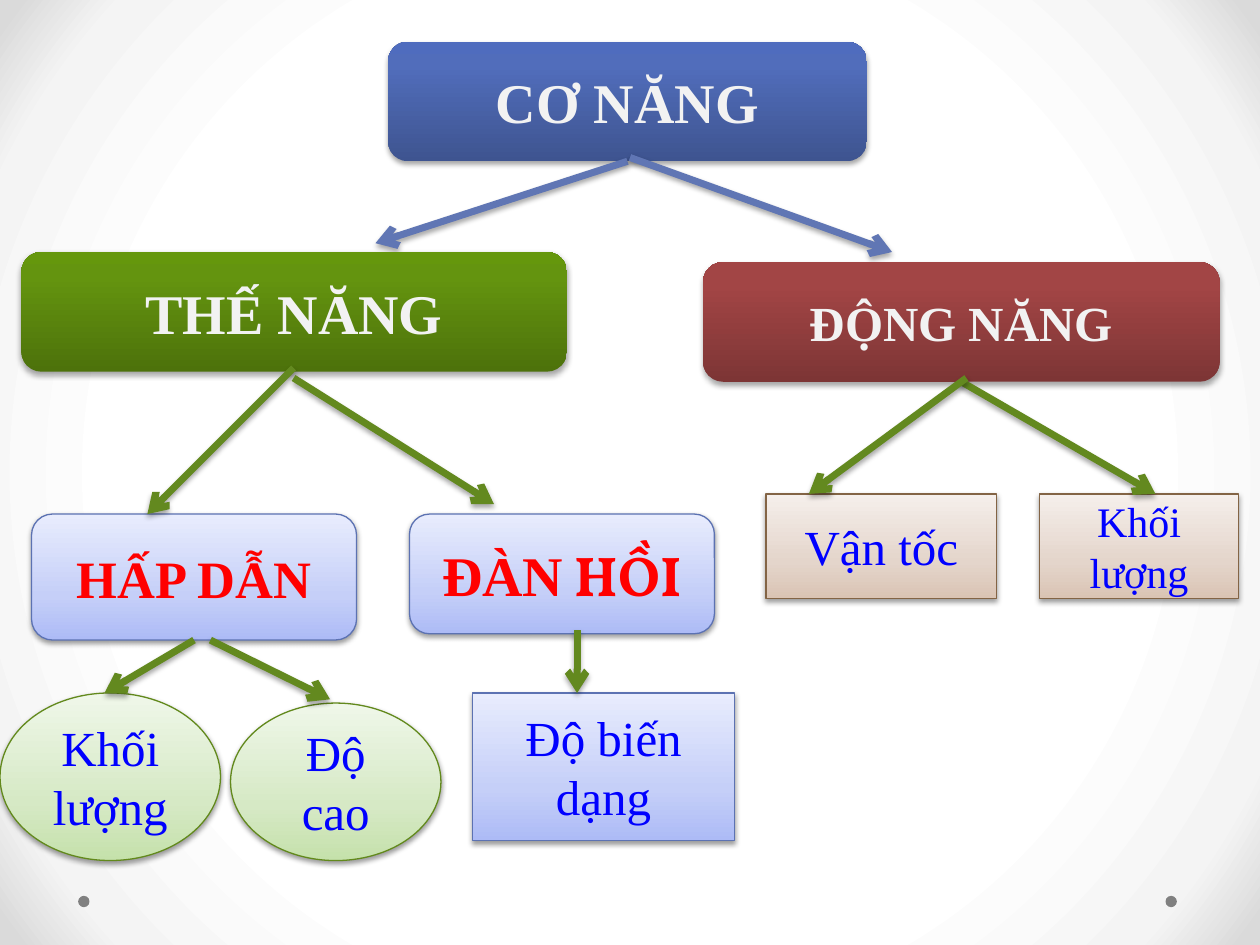
from lxml import etree
from pptx import Presentation
from pptx.dml.color import RGBColor
from pptx.enum.shapes import MSO_CONNECTOR, MSO_SHAPE
from pptx.enum.text import MSO_ANCHOR, PP_ALIGN
from pptx.oxml.ns import qn
from pptx.util import Emu, Pt

PX = 9144
SERIF = "Times New Roman"
COLORS = {
    "dot": "808080", "title": "F2F2F2", "kind": "FF0000", "factor": "0000FF",
    "shadow": "000000", "blue": "6076B4", "green": "63891F",
    "blue_edge": "5C72B2", "green_edge": "62891C", "tan_edge": "836445",
}
GRADIENTS = {
    "page": {65: "FFFFFF", 88: "F4F4F4", 98: "DADADA"},
    "blue": {0: "3E5490", 80: "516DBB", 100: "4F6CBE"},
    "green": {0: "4D720B", 80: "64940F", 100: "65970C"},
    "red": {0: "7D3535", 80: "A24545", 100: "A44343"},
    "pale_blue": {0: "ADBBF6", 35: "C5CFF8", 100: "E8ECFD"},
    "pale_green": {0: "C5E1AB", 35: "D6E9C5", 100: "EFF7E9"},
    "pale_tan": {0: "DAC4B4", 35: "E4D5CB", 100: "F5EFEB"},
}
TITLE = {"shape": MSO_SHAPE.ROUNDED_RECTANGLE, "color": "title", "bold": True}
KIND = {"shape": MSO_SHAPE.ROUNDED_RECTANGLE, "color": "kind", "bold": True,
        "fill": "pale_blue", "edge": "blue_edge"}
FACTOR = {"shape": MSO_SHAPE.RECTANGLE, "color": "factor", "bold": False}
OVAL = FACTOR | {"shape": MSO_SHAPE.OVAL, "fill": "pale_green", "edge": "green_edge"}
BLUE_BOX = FACTOR | {"fill": "pale_blue", "edge": "blue_edge"}
TAN_BOX = FACTOR | {"fill": "pale_tan", "edge": "tan_edge"}


def rgb(name):
    return RGBColor.from_string(COLORS[name])


def px(*lengths):
    return [Emu(length * PX) for length in lengths]


def add_node(parent, tag, **values):
    return etree.SubElement(parent, qn(tag), values)


def set_gradient(fill, name, circle=False):
    fill.gradient()
    gradient = fill._xPr.find(qn("a:gradFill"))
    for child in list(gradient):
        gradient.remove(child)
    stops = add_node(gradient, "a:gsLst")
    for position, color in GRADIENTS[name].items():
        stop = add_node(stops, "a:gs", pos=str(position * 1000))
        add_node(stop, "a:srgbClr", val=color)
    if circle:
        path = add_node(gradient, "a:path", path="circle")
        add_node(path, "a:fillToRect", **dict.fromkeys("ltrb", "50000"))
    else:
        add_node(gradient, "a:lin", ang="16200000", scaled="0")


def add_shadow(effects, opacity, distance):
    shadow = add_node(effects, "a:outerShdw", blurRad=str(Pt(3.1)),
                      dist=str(Pt(distance)), dir="5400000", rotWithShape="0")
    color = add_node(shadow, "a:srgbClr", val=COLORS["shadow"])
    add_node(color, "a:alpha", val=str(opacity * 1000))


def add_box(page, origin, place, spans, size, style):
    left, top, width, height = place
    shape = page.shapes.add_shape(
        style["shape"], *px(origin[0] + left, origin[1] + top, width, height))
    set_gradient(shape.fill, style["fill"])
    shape.shadow.inherit = False
    effects = shape._element.spPr.find(qn("a:effectLst"))
    if "edge" in style:
        shape.line.color.rgb = rgb(style["edge"])
        shape.line.width = Pt(0.75)
        add_shadow(effects, 38, 1.6)
    else:
        shape.line.fill.background()
        add_shadow(effects, 35, 1.8)
    shape.text_frame.word_wrap = True
    shape.text_frame.vertical_anchor = MSO_ANCHOR.MIDDLE
    para = shape.text_frame.paragraphs[0]
    para.alignment = PP_ALIGN.CENTER
    for text, face in spans:
        span = para.add_run()
        span.text = text
        span.font.color.rgb = rgb(style["color"])
        font_format = {"name": face, "size": Pt(size), "bold": style["bold"]}
        for key, value in font_format.items():
            setattr(span.font, key, value)


def add_arrow(page, origin, points, color):
    left, top = origin
    x1, y1, x2, y2 = points
    arrow = page.shapes.add_connector(
        MSO_CONNECTOR.STRAIGHT, *px(left + x1, top + y1, left + x2, top + y2))
    arrow.line.color.rgb = rgb(color)
    arrow.line.width = Pt(4)
    add_node(arrow.line._get_or_add_ln(), "a:tailEnd", type="arrow")
    add_shadow(add_node(arrow._element.spPr, "a:effectLst"), 35, 1.8)


def add_branch(page, origin, boxes, arrows, arrow_color):
    for place, spans, size, style in boxes:
        add_box(page, origin, place, spans, size, style)
    for points in arrows:
        add_arrow(page, origin, points, arrow_color)


def add_backdrop(page):
    set_gradient(page.background.fill, "page", circle=True)
    for left in (925, 62):
        dot = page.shapes.add_shape(MSO_SHAPE.OVAL, *px(left, 711, 9, 9))
        dot.fill.solid()
        dot.fill.fore_color.rgb = rgb("dot")
        dot.line.fill.background()
        dot.shadow.inherit = False


def add_mechanical_energy(page, origin):
    boxes = [((0, 0, 380, 95), [("CƠ NĂNG", SERIF)], 32, TITLE | {"fill": "blue"})]
    arrows = [(190, 95, -10, 160), (192, 92, 400, 167)]
    add_branch(page, origin, boxes, arrows, "blue")


def add_potential_energy(page, origin):
    boxes = [
        ((17, 0, 433, 95), [("THẾ NĂNG", SERIF)], 32, TITLE | {"fill": "green"}),
        ((25, 208, 258, 100), [("HẤP DẪN", SERIF)], 30, KIND),
        ((325, 208, 242, 95), [("ĐÀN", SERIF), (" HỒI", "Vollkorn")], 32, KIND),
        ((0, 350, 175, 133), [("Khối lượng", SERIF)], 28, OVAL),
        ((183, 358, 167, 125), [("Độ cao", SERIF)], 28, OVAL),
        ((375, 350, 208, 117), [("Độ biến dạng", SERIF)], 28, BLUE_BOX),
    ]
    arrows = [
        (233, 92, 117, 208), (233, 100, 392, 200), (154, 308, 83, 350),
        (167, 308, 262, 355), (458, 300, 458, 350),
    ]
    add_branch(page, origin, boxes, arrows, "green")


def add_kinetic_energy(page, origin):
    boxes = [
        ((0, 0, 410, 95), [("ĐỘNG NĂNG", SERIF)], 28, TITLE | {"fill": "red"}),
        ((50, 184, 183, 83), [("Vận tốc", SERIF)], 28, TAN_BOX),
        ((267, 184, 158, 83), [("Khối lượng", SERIF)], 24, TAN_BOX),
    ]
    arrows = [(205, 95, 359, 184), (209, 92, 84, 184)]
    add_branch(page, origin, boxes, arrows, "green")


def main():
    deck = Presentation()
    deck.slide_width, deck.slide_height = px(1000, 750)
    page = deck.slides.add_slide(deck.slide_layouts[6])
    add_backdrop(page)
    add_mechanical_energy(page, (308, 33))
    add_potential_energy(page, (0, 200))
    add_kinetic_energy(page, (558, 208))
    deck.save("out.pptx")


if __name__ == "__main__":
    main()
